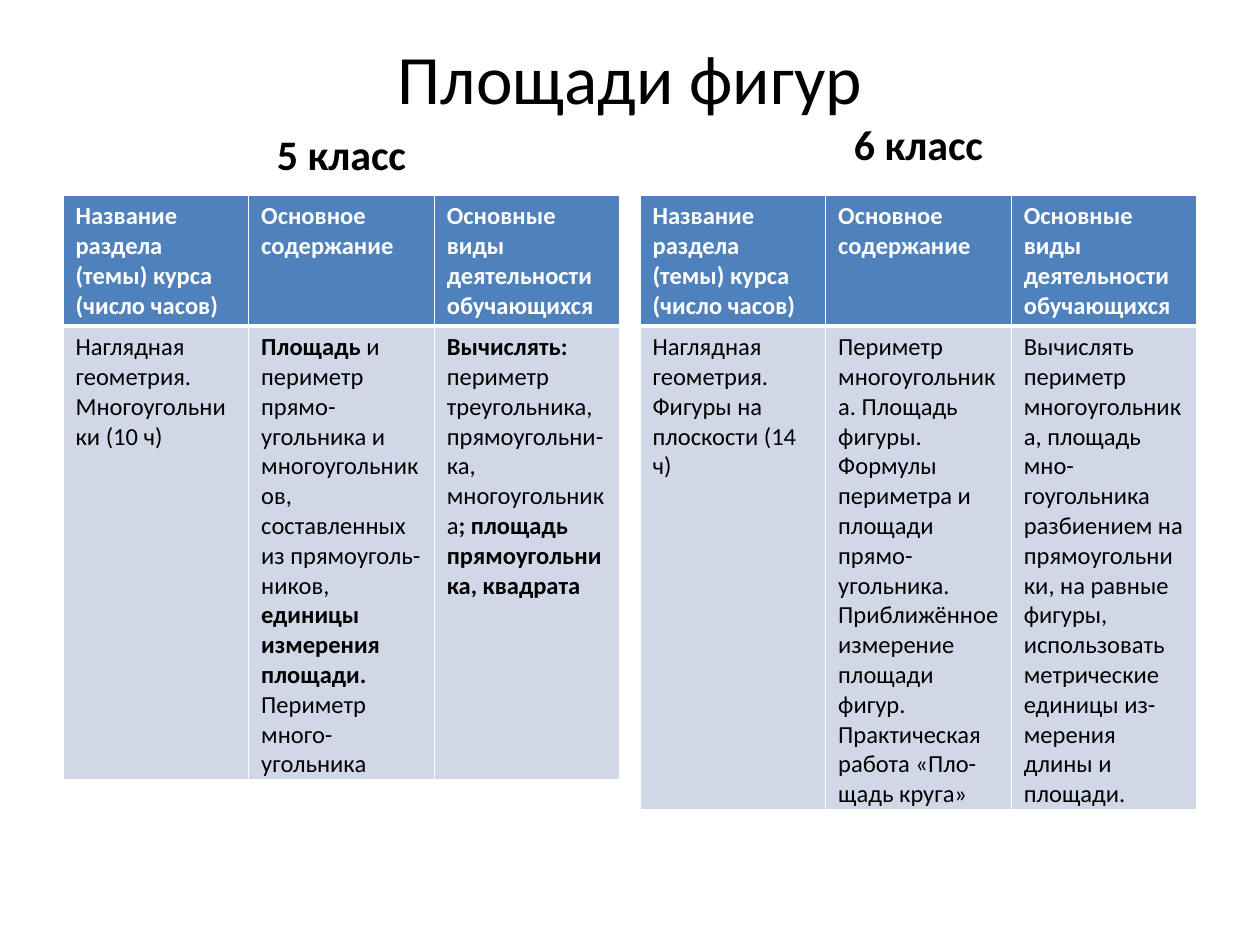
from lxml.etree import SubElement
from pptx import Presentation
from pptx.dml.color import RGBColor
from pptx.enum.text import MSO_ANCHOR, PP_ALIGN
from pptx.oxml.ns import qn
from pptx.util import Emu, Pt

FONT = "Calibri"
BLACK, WHITE, BLUE, PALE = "000000", "FFFFFF", "4F81BD", "D0D8E8"
HEADINGS = [
    "Название раздела (темы) курса (число часов)",
    "Основное содержание",
    "Основные виды деятельности обучающихся",
]
# Each cell is a list of (text, bold) runs.
GRADE_5 = [
    [("Наглядная геометрия. Многоугольники (10 ч)", False)],
    [("Площадь", True),
     (" и периметр прямо- угольника и многоугольников, составленных "
      "из прямоуголь- ников, ", False),
     ("единицы измерения площади. ", True),
     ("Периметр много- угольника", False)],
    [("Вычислять: ", True),
     ("периметр треугольника, прямоугольни- ка, многоугольника", False),
     ("; площадь прямоугольника, квадрата", True)],
]
GRADE_6 = [
    [("Наглядная геометрия. Фигуры на плоскости (14 ч)", False)],
    [("Периметр многоугольника. Площадь фигуры. Формулы периметра и площади "
      "прямо- угольника. Приближённое измерение площади фигур. "
      "Практическая работа «Пло- щадь круга»", False)],
    [("Вычислять периметр многоугольника, площадь мно- гоугольника разбиением "
      "на прямоугольники, на равные фигуры, использовать метрические единицы "
      "из- мерения длины и площади.", False)],
]


def px(n):
    return Emu(round(n * 914400 / 126))


def rgb(color):
    return RGBColor.from_string(color)


def set_font(font, size, color):
    font.name = FONT
    font.size = Pt(size)
    font.color.rgb = rgb(color)


def add_heading(s, box, text, size, anchor, bold=False, before=0):
    tf = s.shapes.add_textbox(*map(px, box)).text_frame
    tf.word_wrap = True
    tf.vertical_anchor = anchor
    p = tf.paragraphs[0]
    p.text = text
    p.alignment = PP_ALIGN.CENTER
    p.space_before = Pt(before)
    set_font(p.font, size, color=BLACK)
    p.font.bold = bold


def set_borders(cell, top, bottom):
    """Draw white borders; widths are in points. Call before setting the fill."""
    tcPr = cell._tc.get_or_add_tcPr()
    for side, width in zip("LRTB", (1, 1, top, bottom)):
        ln = SubElement(tcPr, qn(f"a:ln{side}"), w=str(Pt(width)))
        fill = SubElement(ln, qn("a:solidFill"))
        SubElement(fill, qn("a:srgbClr"), val=WHITE)


def fill_cell(cell, runs, color, fill, top, bottom):
    set_borders(cell, top, bottom)
    cell.fill.solid()
    cell.fill.fore_color.rgb = rgb(fill)
    p = cell.text_frame.paragraphs[0]
    set_font(p.font, 14, color)
    for text, bold in runs:
        r = p.add_run()
        r.text = text
        set_font(r.font, 14, color)
        r.font.bold = bold


def add_grade(s, box, heading, heading_height, row):
    """Place a grade heading and, below it, its curriculum table."""
    x, y, w, h = box
    add_heading(s, (x, y, w, heading_height), heading, 24,
                MSO_ANCHOR.BOTTOM, bold=True, before=4.8)
    offset, header_height = 79, 131
    table = s.shapes.add_table(2, 3, px(x), px(y + offset),
                               px(w), px(h - offset)).table
    table.rows[0].height = px(header_height)
    table.rows[1].height = px(h - offset - header_height)
    for i, (title, runs) in enumerate(zip(HEADINGS, row)):
        fill_cell(table.cell(0, i), [(title, True)], WHITE, BLUE, 1, 3)
        fill_cell(table.cell(1, i), runs, BLACK, PALE, 3, 1)


def main():
    prs = Presentation()
    prs.slide_width, prs.slide_height = px(1260), px(945)
    s = prs.slides.add_slide(prs.slide_layouts[6])
    add_heading(s, (63, 38, 1134, 77), "Площади фигур", 39.6, MSO_ANCHOR.MIDDLE)
    add_grade(s, (63, 116, 557, 662), "5 класс", 69, GRADE_5)
    add_grade(s, (640, 116, 557, 693), "6 класс", 59, GRADE_6)
    prs.save("out.pptx")


if __name__ == "__main__":
    main()
